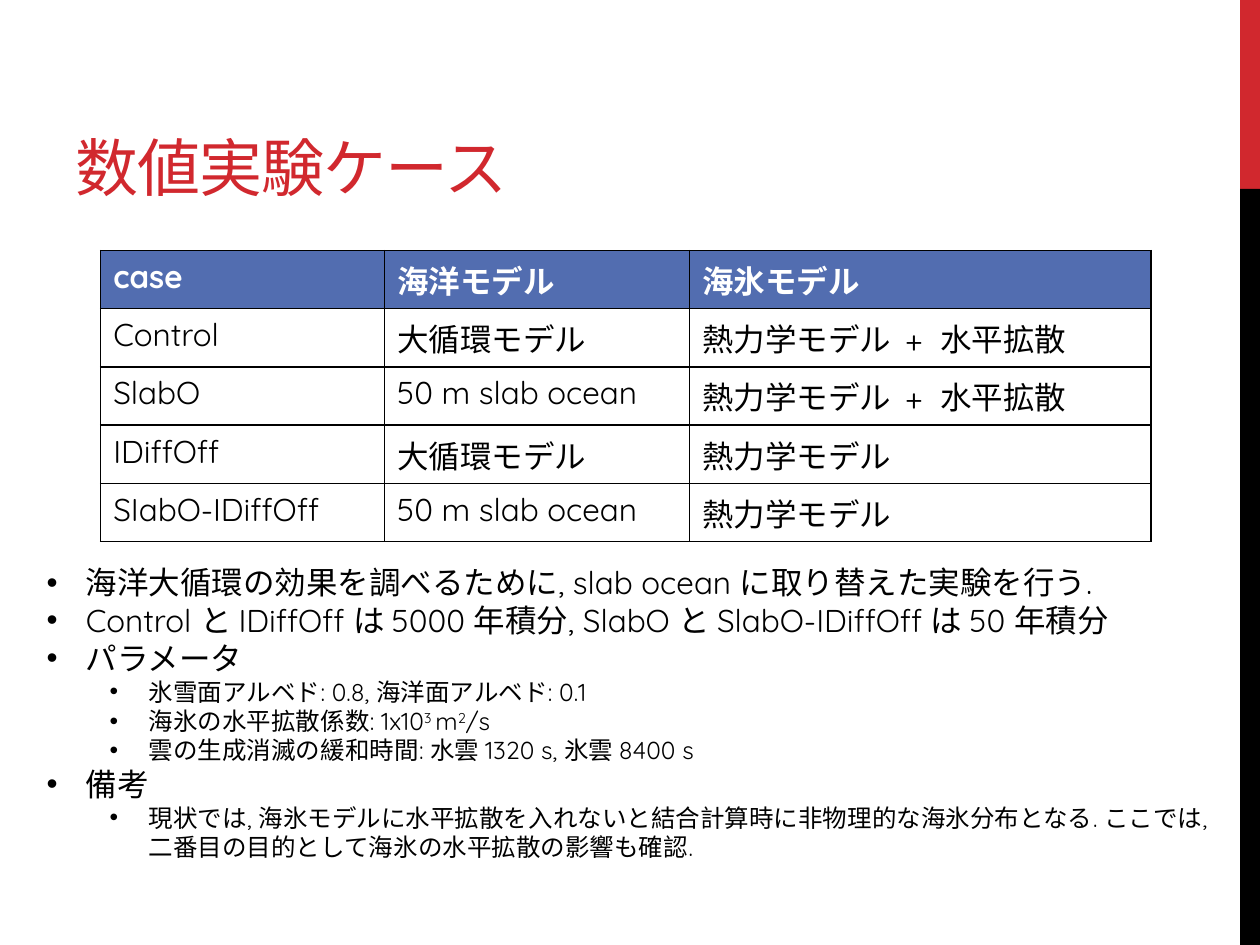
from lxml.etree import SubElement
from pptx import Presentation
from pptx.dml.color import RGBColor
from pptx.enum.shapes import MSO_SHAPE as SHAPE
from pptx.enum.text import MSO_ANCHOR as ANCHOR, MSO_AUTO_SIZE as AUTO, PP_ALIGN as ALIGN
from pptx.oxml.ns import qn
from pptx.util import Cm, Pt

RED, BLACK, WHITE, BLUE = "D1282E", "000000", "FFFFFF", "526DB0"
FONT = "Quicksand"

CASES = [
    ["case", "海洋モデル", "海氷モデル"],
    ["Control", "大循環モデル", "熱力学モデル  +  水平拡散"],
    ["SlabO", "50 m slab ocean", "熱力学モデル  +  水平拡散"],
    ["IDiffOff", "大循環モデル", "熱力学モデル"],
    ["SIabO-IDiffOff", "50 m slab ocean", "熱力学モデル"],
]

NOTES = [
    (0, ["海洋大循環の効果を調べるために, slab ocean に取り替えた実験を行う."]),
    (0, ["Control と IDiffOff は 5000 年積分, SlabO と SlabO-IDiffOff は 50 年積分"]),
    (0, ["パラメータ"]),
    (1, ["氷雪面アルベド: 0.8, 海洋面アルベド: 0.1"]),
    (1, ["海氷の水平拡散係数: 1x10", "3 ", "m", "2", "/s"]),
    (1, ["雲の生成消滅の緩和時間: 水雲 1320 s, 氷雲 8400 s"]),
    (0, ["備考"]),
    (1, ["現状では, 海氷モデルに水平拡散を入れないと結合計算時に非物理的な海氷分布となる. "
         "ここでは, 二番目の目的として海氷の水平拡散の影響も確認."]),
]


def rgb(color):
    return RGBColor.from_string(color)


def add_run(p, text, size=18, color=BLACK, bold=False, **attrs):
    r = p.add_run()
    r.text = text
    r.font.name = FONT
    r.font.size = Pt(size)
    r.font.bold = bold
    r.font.color.rgb = rgb(color)
    for name, value in attrs.items():
        r.font._element.set(name, str(value))


def add_borders(cell, color=BLACK, width=1):
    tc_pr = cell._tc.get_or_add_tcPr()
    for side in ("lnL", "lnR", "lnT", "lnB"):
        ln = SubElement(tc_pr, qn("a:" + side), w=str(Pt(width)))
        fill = SubElement(ln, qn("a:solidFill"))
        SubElement(fill, qn("a:srgbClr"), val=color)


def add_bullet(p, left, hang):
    p_pr = p._p.get_or_add_pPr()
    p_pr.set("marL", str(Cm(left)))
    p_pr.set("indent", str(-Cm(hang)))
    SubElement(p_pr, qn("a:buFont"), typeface="Arial")
    SubElement(p_pr, qn("a:buChar"), char="•")


class Deck:
    def __init__(self, width, height):
        self.prs = Presentation()
        self.prs.slide_width, self.prs.slide_height = Cm(width), Cm(height)
        self.s = self.prs.slides.add_slide(self.prs.slide_layouts[5])

    def bar(self, x, y, w, h, color):
        sp = self.s.shapes.add_shape(SHAPE.RECTANGLE, Cm(x), Cm(y), Cm(w), Cm(h))
        sp.shadow.inherit = False
        sp.fill.solid()
        sp.fill.fore_color.rgb = rgb(color)
        sp.line.fill.background()

    def title(self, x, y, w, h, text):
        sp = self.s.shapes.title
        sp.left, sp.top, sp.width, sp.height = Cm(x), Cm(y), Cm(w), Cm(h)
        tf = sp.text_frame
        tf.auto_size = AUTO.NONE
        tf.vertical_anchor = ANCHOR.BOTTOM
        p = tf.paragraphs[0]
        p.alignment = ALIGN.LEFT
        add_run(p, text, 36, RED, spc=-60)

    def table(self, x, y, widths, row_height, rows):
        frame = self.s.shapes.add_table(len(rows), len(widths), Cm(x), Cm(y),
                                        Cm(sum(widths)), Cm(row_height * len(rows)))
        table = frame.table
        for column, width in zip(table.columns, widths):
            column.width = Cm(width)
        for i, row in enumerate(rows):
            head = i == 0
            for j, text in enumerate(row):
                cell = table.cell(i, j)
                add_borders(cell)
                cell.fill.solid()
                cell.fill.fore_color.rgb = rgb(BLUE if head else WHITE)
                add_run(cell.text_frame.paragraphs[0], text,
                        color=WHITE if head else BLACK, bold=head)

    def bullets(self, x, y, w, h, items):
        tf = self.s.shapes.add_textbox(Cm(x), Cm(y), Cm(w), Cm(h)).text_frame
        tf.word_wrap = True
        tf.auto_size = AUTO.SHAPE_TO_FIT_TEXT
        for i, (level, parts) in enumerate(items):
            p = tf.add_paragraph() if i else tf.paragraphs[0]
            p.level = level
            add_bullet(p, 0.79 + 1.27 * level, 0.79)
            for j, text in enumerate(parts):
                add_run(p, text, 14 if level else 18, baseline=30000 * (j % 2))


def main():
    deck = Deck(25.4, 19.05)
    deck.bar(25, 0, 0.4, 3.81, RED)
    deck.bar(25, 3.81, 0.4, 15.24, BLACK)
    deck.title(1.27, 0.43, 16.08, 3.81, "数値実験ケース")
    deck.table(2.03, 5.05, [5.72, 6.15, 9.3], 1.03, CASES)
    deck.bullets(0.69, 11.23, 24.38, 6.32, NOTES)
    deck.prs.save("out.pptx")


if __name__ == "__main__":
    main()
